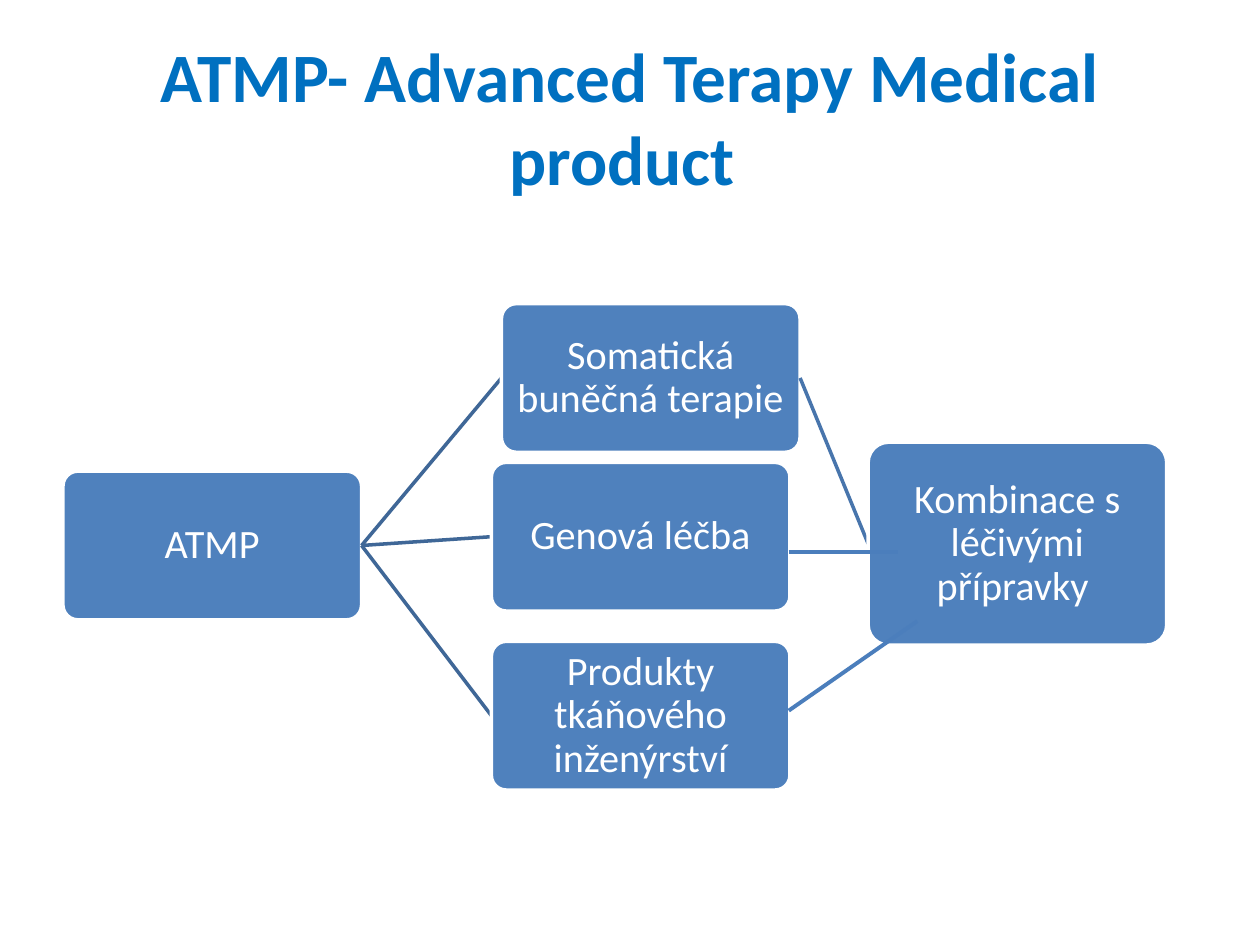
from lxml.etree import SubElement
from pptx import Presentation
from pptx.dml.color import RGBColor
from pptx.enum.shapes import MSO_CONNECTOR as Connector, MSO_SHAPE as Shape
from pptx.enum.text import MSO_ANCHOR as Anchor, PP_ALIGN as Align
from pptx.oxml.ns import qn
from pptx.util import Inches, Pt

# Lengths are percentages of the slide's width and height
WIDTH, HEIGHT = 10, 7.5
NODE_WIDTH, NODE_HEIGHT = 23.7, 15.73
BLUE, WHITE, TITLE_BLUE = "4F81BD", "FFFFFF", "0070C0"
ROOT_LINK, BRANCH_LINK, EXTRA_LINK = "3F6797", "4875AC", "4B7EBC"


def color(hex_string):
    return RGBColor.from_string(hex_string)


def across(share):
    return Inches(WIDTH * share / 100)


def down(share):
    return Inches(HEIGHT * share / 100)


def place(box):
    left, top, width, height = box
    return across(left), down(top), across(width), down(height)


def set_text(shape, text, size, hex_string, bold=False):
    frame = shape.text_frame
    frame.text = text
    frame.word_wrap = True
    frame.vertical_anchor = Anchor.MIDDLE
    paragraph = frame.paragraphs[0]
    paragraph.alignment = Align.CENTER
    font = paragraph.runs[0].font
    font.name, font.size, font.bold = "Calibri", Pt(size), bold
    font.color.rgb = color(hex_string)
    return frame


def add_title(slide, box):
    shape = slide.shapes.add_textbox(*place(box))
    set_text(shape, "ATMP- Advanced Terapy Medical product ", 39.6, TITLE_BLUE, True)


def add_node(slide, box, text):
    shape = slide.shapes.add_shape(Shape.ROUNDED_RECTANGLE, *place(box))
    shape.adjustments[0] = 0.1
    shape.shadow.inherit = False
    shape.fill.solid()
    shape.fill.fore_color.rgb = color(BLUE)
    shape.line.color.rgb = color(WHITE)
    shape.line.width = Pt(2)
    frame = set_text(shape, text, 23, WHITE)
    frame.margin_left = frame.margin_right = Inches(0.02)
    frame.margin_top = frame.margin_bottom = Inches(0.02)
    frame.paragraphs[0].line_spacing = 0.9


def add_link(slide, start, end, hex_string, width=2):
    link = slide.shapes.add_connector(
        Connector.STRAIGHT, across(start[0]), down(start[1]), across(end[0]), down(end[1]))
    link.line.color.rgb = color(hex_string)
    link.line.width = Pt(width)
    SubElement(link._element.spPr, qn("a:effectLst"))


def left_middle(box):
    return box[0], box[1] + box[3] / 2


def right_middle(box):
    return box[0] + box[2], box[1] + box[3] / 2


def add_diagram(slide, box):
    left, top, width, height = box

    def node_box(column, row, node_height=NODE_HEIGHT):
        return left + column, top + row, NODE_WIDTH, node_height

    root = node_box(0, 17.73)
    somatic = node_box(34.8, 0)
    gene = node_box(34, 16.8)
    tissue = node_box(34, height - NODE_HEIGHT)
    combination = node_box(width - NODE_WIDTH, 14.67, 21.47)

    # Tree: each link lies beneath the node it leads to
    add_node(slide, root, "ATMP")
    for parent, child, text, link_color in (
        (root, somatic, "Somatická buněčná terapie", ROOT_LINK),
        (somatic, combination, "Kombinace s léčivými přípravky ", BRANCH_LINK),
        (root, gene, "Genová léčba", ROOT_LINK),
        (root, tissue, "Produkty tkáňového inženýrství", ROOT_LINK),
    ):
        add_link(slide, right_middle(parent), left_middle(child), link_color)
        add_node(slide, child, text)

    # Extra links that run over the combination node
    for start, end in (((62.6, 75.2), (72.8, 65.73)), ((62.6, 58.4), (71.3, 58.4))):
        add_link(slide, start, end, EXTRA_LINK, 2.25)


def main():
    presentation = Presentation()
    presentation.slide_width = Inches(WIDTH)
    presentation.slide_height = Inches(HEIGHT)
    slide = presentation.slides.add_slide(presentation.slide_layouts[6])
    add_title(slide, (5, 4, 90, 16.67))
    add_diagram(slide, (5, 32.13, 87.6, 51.47))
    presentation.save("out.pptx")


if __name__ == "__main__":
    main()
